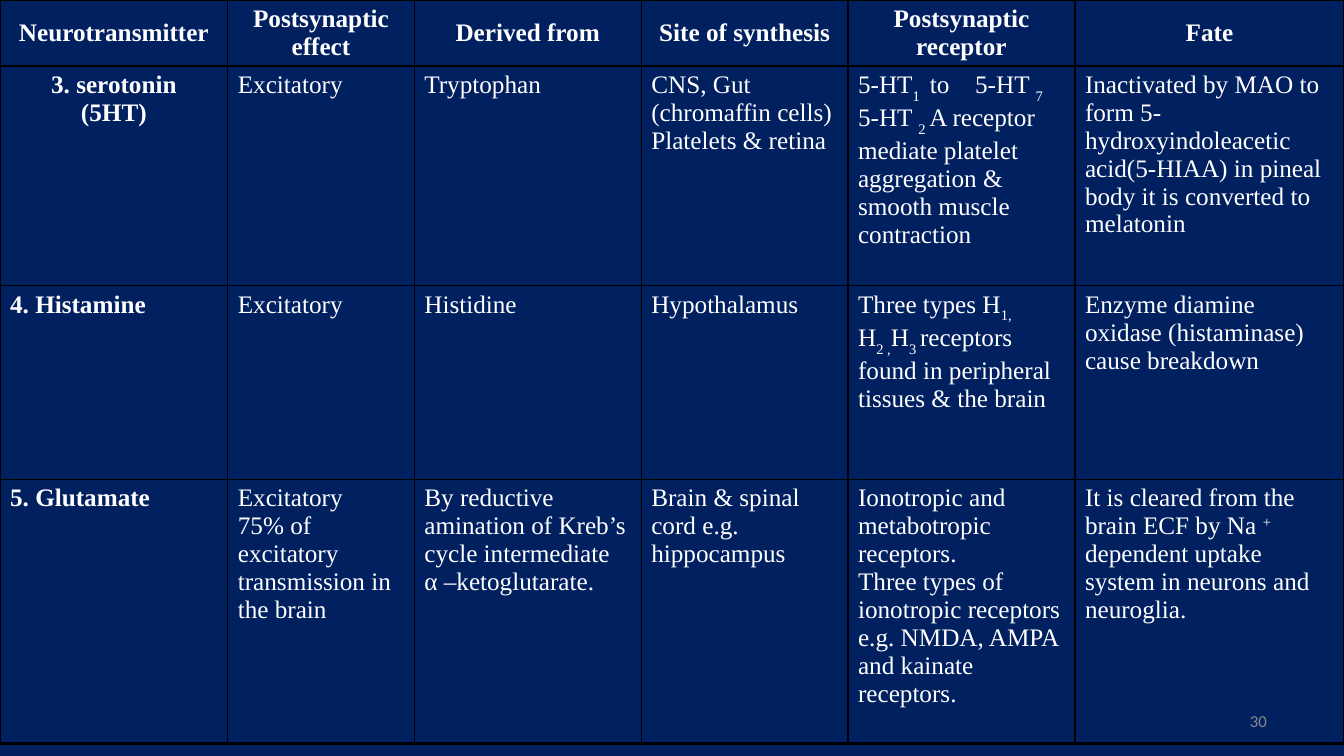
import pptx
import pptx.dml.color
import pptx.enum.text
import pptx.oxml
import pptx.oxml.ns
import pptx.util
from lxml import etree

Cm = pptx.util.Cm
Pt = pptx.util.Pt
Align = pptx.enum.text.PP_ALIGN
Anchor = pptx.enum.text.MSO_ANCHOR

NAVY, WHITE, BLACK, GRAY = "002060", "FFFFFF", "000000", "898989"
COLUMN_WIDTHS = [5.74, 4.7, 5.72, 5.21, 5.72, 6.78]
ROW_HEIGHTS = [1.63, 5.54, 4.88, 6.65]
ROW_LINES = [2, 1, 0.75, 1, 2]
COLUMN_LINES = [2, 1, 1, 1, 1, 1, 1]
SHIFTS = {"↓": "-30000", "↑": "30000"}

NEUROTRANSMITTERS = [
    ["Neurotransmitter", "Postsynaptic effect", "Derived from",
     "Site of synthesis", "Postsynaptic receptor", "Fate"],
    ["3. serotonin\n(5HT)", "Excitatory", "Tryptophan",
     "CNS, Gut (chromaffin cells) Platelets & retina",
     "5-HT|↓1 | to\t5-HT |↓7\n5-HT |↓2 |A receptor mediate platelet "
     "aggregation & smooth muscle contraction",
     "Inactivated by MAO to form 5-hydroxyindoleacetic acid(5-HIAA) "
     "in pineal body it is converted to melatonin"],
    ["4. Histamine", "Excitatory", "Histidine", "Hypothalamus",
     "Three types H|↓1,| H|↓2 ,|H|↓3 |receptors found in peripheral "
     "tissues & the brain",
     "Enzyme diamine oxidase (histaminase) cause breakdown"],
    ["5. Glutamate",
     "Excitatory\n75% of excitatory transmission in the brain",
     "By reductive amination of Kreb’s cycle intermediate\nα –ketoglutarate.",
     "Brain & spinal cord e.g. hippocampus",
     "Ionotropic and metabotropic receptors.\nThree types of ionotropic "
     "receptors e.g. NMDA, AMPA and kainate receptors.",
     "It is cleared from the brain ECF by Na |↑+| dependent uptake system "
     "in neurons and neuroglia."],
]


def color(value):
    """Turn a hex string into a colour."""
    return pptx.dml.color.RGBColor.from_string(value)


def add_child(parent, tag, **attributes):
    """Append a drawing element with the given attributes."""
    return etree.SubElement(parent, pptx.oxml.ns.qn(tag), attributes)


class SlideBuilder:
    """Hold the text style and the current slide."""

    def __init__(self, presentation, background):
        """Add a blank slide with a solid background."""
        self.font_name = "Times New Roman"
        self.font_size = 18
        self.slide = presentation.slides.add_slide(presentation.slide_layouts[6])
        self.slide.background.fill.solid()
        self.slide.background.fill.fore_color.rgb = color(background)

    def style_run(self, run, hex_color=WHITE, bold=False, name=None, size=None):
        """Apply font settings to a run."""
        run.font.name = name or self.font_name
        run.font.size = Pt(size or self.font_size)
        run.font.bold = bold
        run.font.color.rgb = color(hex_color)

    def write_paragraph(self, paragraph, text, bold, alignment):
        """Write the parts between bars, shifting those led by an arrow."""
        paragraph.alignment = alignment
        if "\t" in text:
            tabs = add_child(paragraph._p.get_or_add_pPr(), "a:tabLst")
            add_child(tabs, "a:tab", pos=str(Cm(2.95)), algn="l")
        for part in text.split("|"):
            run = paragraph.add_run()
            run.text = part.lstrip("↓↑")
            self.style_run(run, bold=bold)
            if part[0] in SHIFTS:
                run.font._element.set("baseline", SHIFTS[part[0]])

    def border_cell(self, cell, widths):
        """Draw the left, right, top and bottom lines of a cell."""
        properties = cell._tc.get_or_add_tcPr()
        for side, width in zip("LRTB", widths):
            line = add_child(properties, f"a:ln{side}", w=str(Pt(width)))
            add_child(add_child(line, "a:solidFill"), "a:srgbClr", val=BLACK)

    def table(self, rows, left, top):
        """Add the bordered table with a centred header row."""
        shape = self.slide.shapes.add_table(
            len(rows), len(COLUMN_WIDTHS), Cm(left), Cm(top),
            Cm(sum(COLUMN_WIDTHS)), Cm(sum(ROW_HEIGHTS)))
        table = shape.table
        table.first_row = table.horz_banding = False
        for column, width in zip(table.columns, COLUMN_WIDTHS):
            column.width = Cm(width)
        for row, height in zip(table.rows, ROW_HEIGHTS):
            row.height = Cm(height)
        for row_index, texts in enumerate(rows):
            for column_index, text in enumerate(texts):
                cell = table.cell(row_index, column_index)
                header = row_index == 0
                first = column_index == 0
                centred = header or (first and "\n" in text)
                self.border_cell(cell, COLUMN_LINES[column_index:column_index + 2]
                                 + ROW_LINES[row_index:row_index + 2])
                cell.fill.solid()
                cell.fill.fore_color.rgb = color(NAVY)
                cell.vertical_anchor = Anchor.MIDDLE if header else Anchor.TOP
                frame = cell.text_frame
                for index, line in enumerate(text.split("\n")):
                    paragraph = frame.add_paragraph() if index else frame.paragraphs[0]
                    self.write_paragraph(paragraph, line, header or first,
                                         Align.CENTER if centred else Align.LEFT)

    def page_number(self, text, left, top, width, height):
        """Add the right-aligned page number."""
        shape = self.slide.shapes.add_textbox(Cm(left), Cm(top), Cm(width), Cm(height))
        frame = shape.text_frame
        frame.word_wrap = True
        frame.vertical_anchor = Anchor.MIDDLE
        frame.text = text
        frame.paragraphs[0].alignment = Align.RIGHT
        self.style_run(frame.paragraphs[0].runs[0], GRAY, name="Calibri", size=12)


def main():
    """Build the neurotransmitter slide."""
    presentation = pptx.Presentation()
    presentation.slide_width = Cm(33.87)
    presentation.slide_height = Cm(19.05)
    builder = SlideBuilder(presentation, NAVY)
    builder.table(NEUROTRANSMITTERS, 0, 0)
    builder.page_number("30", 24.28, 17.65, 7.9, 1.02)
    presentation.save("out.pptx")


if __name__ == "__main__":
    main()
